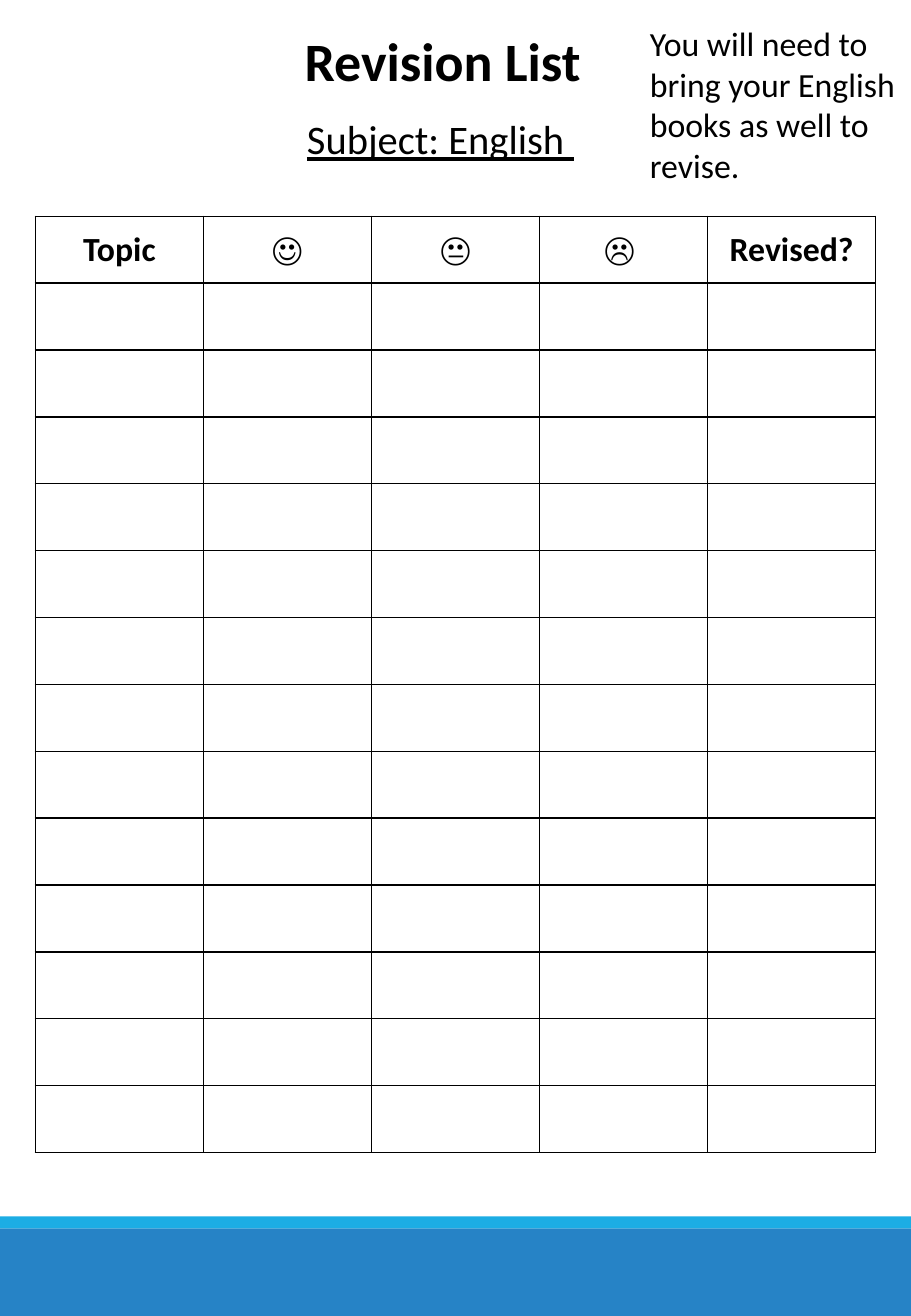
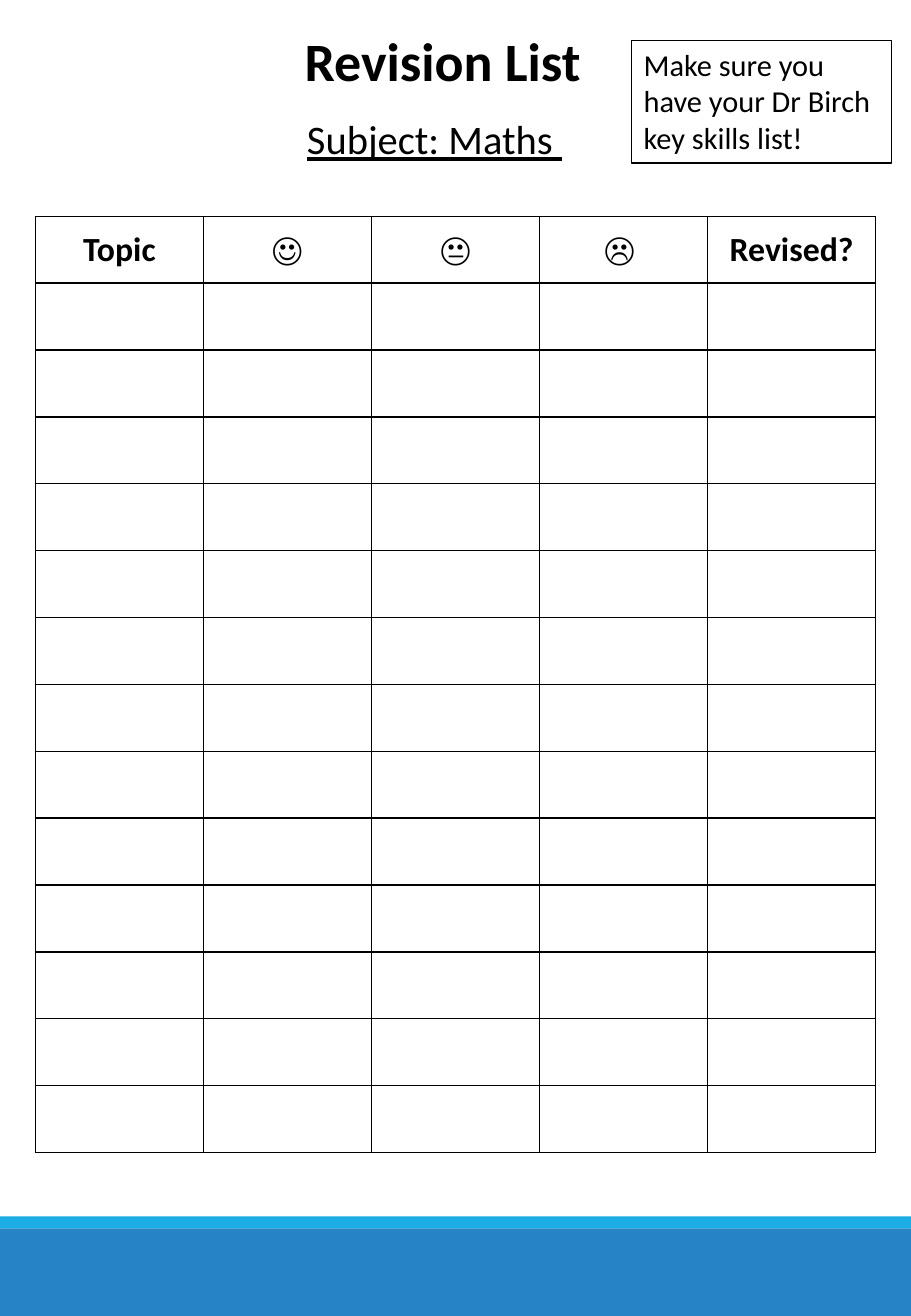
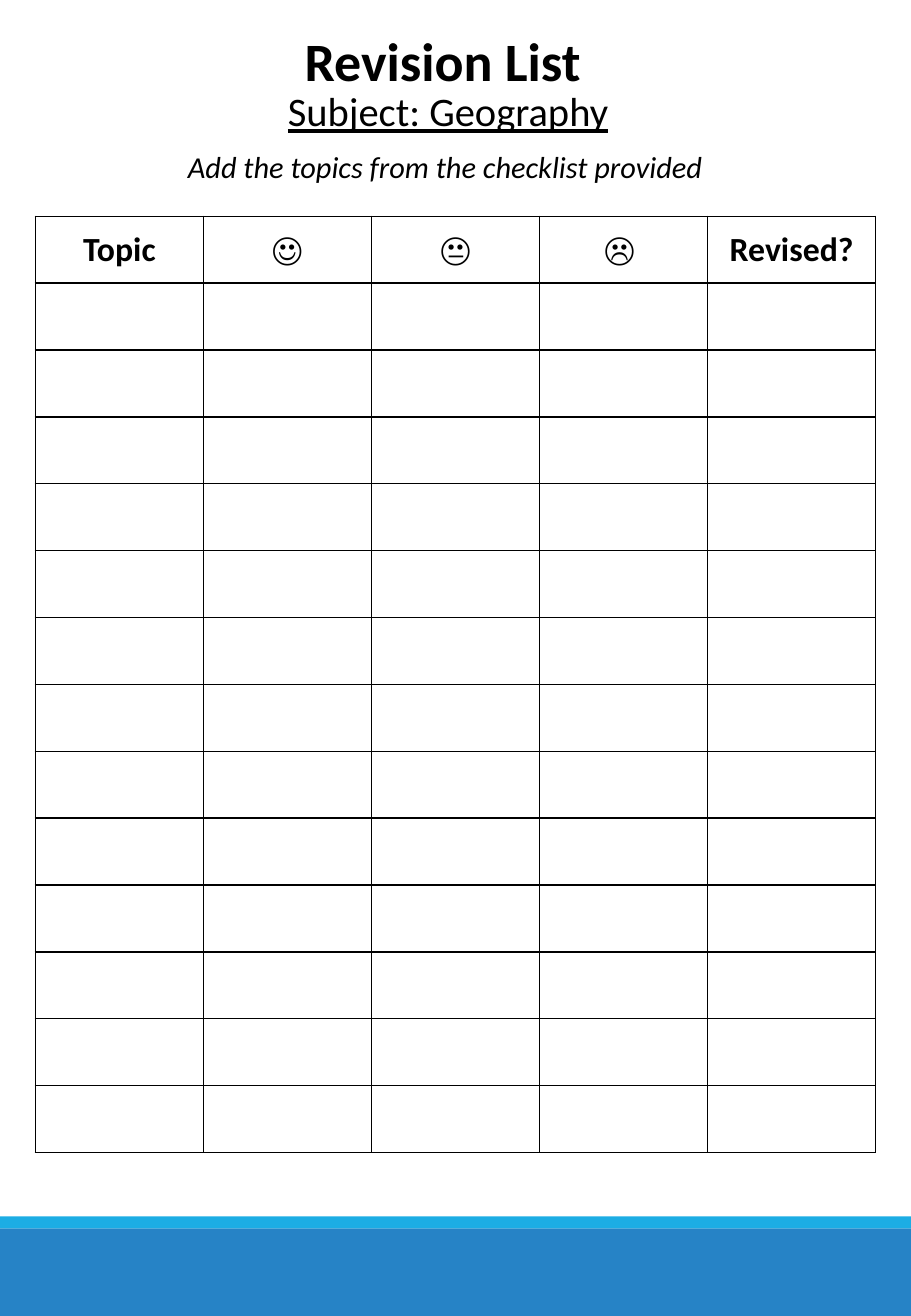
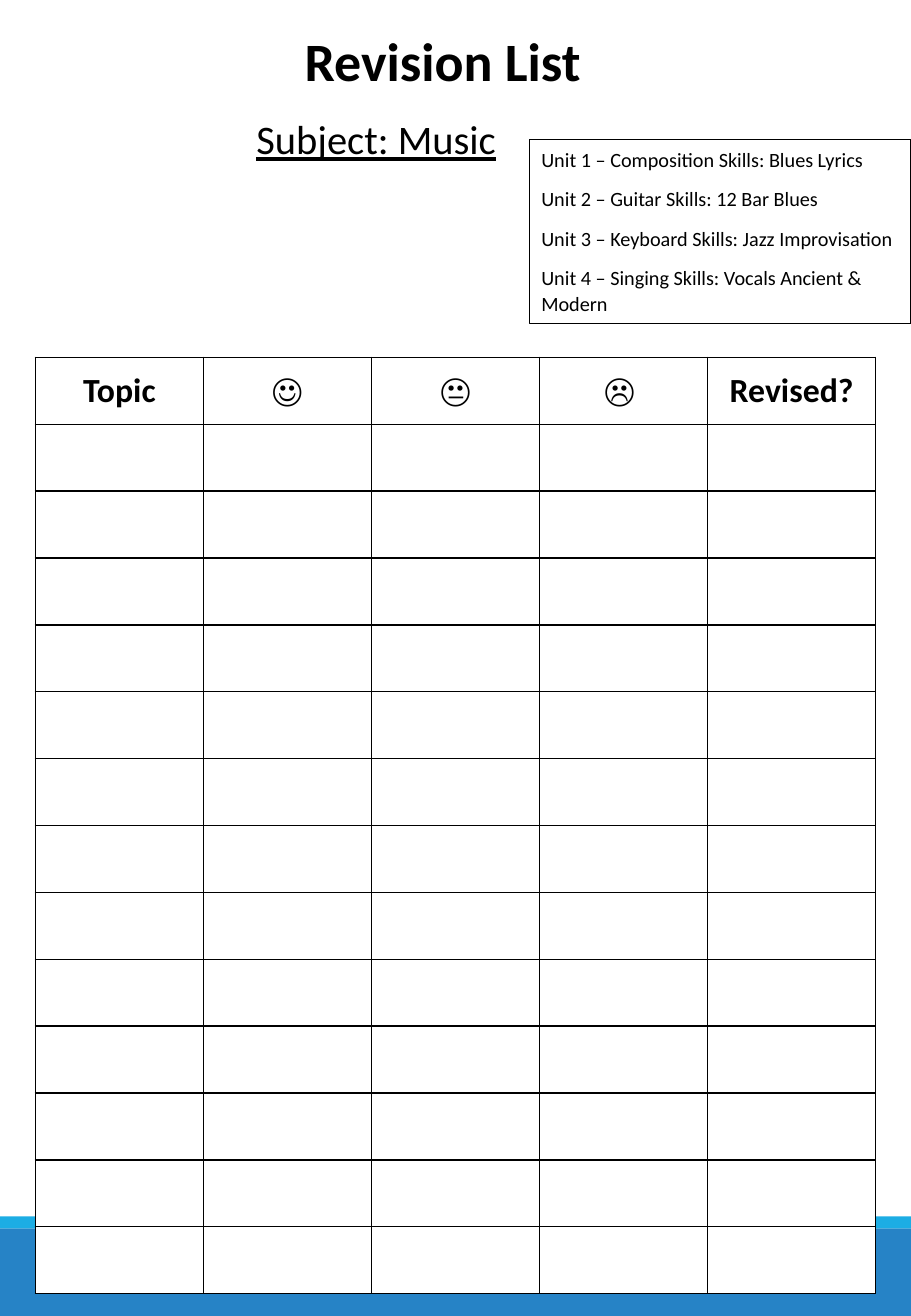
import pptx
import pptx.util
import pptx.dml.color
import pptx.enum.shapes
import pptx.enum.text
import pptx.oxml.ns
import lxml.etree

Cm, Pt = pptx.util.Cm, pptx.util.Pt
RGBColor = pptx.dml.color.RGBColor
BLACK = RGBColor(0x00, 0x00, 0x00)
WHITE = RGBColor(0xFF, 0xFF, 0xFF)
BLUE = RGBColor(0x26, 0x83, 0xC6)
SKY = RGBColor(0x1C, 0xAD, 0xE4)
FONT = "Calibri"
RECT = pptx.enum.shapes.MSO_SHAPE.RECTANGLE
ALIGN = pptx.enum.text.PP_ALIGN
ANCHOR = pptx.enum.text.MSO_ANCHOR
FIT = pptx.enum.text.MSO_AUTO_SIZE.SHAPE_TO_FIT_TEXT

# Boxes are left, top, width, height in cm
WIDE, HIGH = 19.05, 27.51
FOOT = (0, 25.43, WIDE, HIGH - 25.43)
STRIPE = 0.25
TITLE = (6.12, 0.46, 8.13, 1.63)
HEADS = ("Topic", "☺", "😐", "☹ ", "Revised?")
ROWS = 14
GRID = (0.74, 4.52, 17.57, 19.58)

PAGES = (
    dict(topic="Subject: English ", place=(6.17, 2.26, 6.73, 1.28),
         note=("You will need to bring your English books as well to revise.",),
         spot=(13.34, 0.36, 5.71, 3.68), style=dict(size=20)),
    dict(topic="Subject: Maths ", place=(6.17, 2.26, 6.73, 1.28),
         note=("Make sure you have your Dr Birch key skills list!",),
         spot=(13.21, 0.84, 5.44, 2.57), style=dict(size=18, frame=True)),
    dict(topic="Subject: Geography", place=(5.77, 1.68, 7.52, 1.28),
         note=("Add the topics from the checklist provided",),
         spot=(3.68, 2.97, 14.99, 1.03), style=dict(size=18, italic=True)),
    dict(topic="Subject: Music", place=(5.11, 2.26, 10.44, 1.28),
         note=("Unit 1 – Composition Skills: Blues Lyrics",
               "Unit 2 – Guitar Skills: 12 Bar Blues",
               "Unit 3 – Keyboard Skills: Jazz Improvisation",
               "Unit 4 – Singing Skills: Vocals Ancient & Modern"),
         spot=(11.07, 2.92, 7.98, 3.84),
         style=dict(size=12, frame=True, after=8, lead=1.07), top=7.47),
)


def to_cm(box):
    return [Cm(round(side, 2)) for side in box]


def set_font(para, size, **marks):
    for run in para.runs:
        run.font.name = FONT
        run.font.size = Pt(size)
        run.font.color.rgb = BLACK
        for name, value in marks.items():
            setattr(run.font, name, value)


def add_rect(slide, box, fill=None):
    shape = slide.shapes.add_shape(RECT, *to_cm(box))
    shape.shadow.inherit = False
    if fill is None:
        shape.fill.background()
        shape.line.color.rgb = BLACK
        shape.line.width = Pt(0.75)
    else:
        shape.fill.solid()
        shape.fill.fore_color.rgb = fill
        shape.line.fill.background()
    return shape


def add_text(slide, box, lines, size, frame=False, after=0, lead=1, **marks):
    shape = (add_rect(slide, box) if frame
             else slide.shapes.add_textbox(*to_cm(box)))
    text = shape.text_frame
    text.text = "\n".join(lines)
    text.word_wrap = True
    text.auto_size = FIT
    text.vertical_anchor = ANCHOR.TOP
    for para in text.paragraphs:
        para.alignment = ALIGN.LEFT
        para.space_after = Pt(after)
        para.line_spacing = lead
        set_font(para, size, **marks)


def add_edges(cell):
    props = cell._tc.get_or_add_tcPr()
    qn = pptx.oxml.ns.qn
    for side in ("lnL", "lnR", "lnT", "lnB"):
        line = lxml.etree.SubElement(props, qn("a:" + side), w=str(Pt(1)))
        fill = lxml.etree.SubElement(line, qn("a:solidFill"))
        lxml.etree.SubElement(fill, qn("a:srgbClr"), val=str(BLACK))


def add_foot(slide, box):
    left, top, width, height = box
    add_rect(slide, (left, top + STRIPE, width, height - STRIPE), BLUE)
    add_rect(slide, (left, top, width, STRIPE), SKY)


def add_grid(slide, box):
    table = slide.shapes.add_table(ROWS, len(HEADS), *to_cm(box)).table
    table.first_row = table.horz_banding = False
    for col in table.columns:
        col.width = Cm(box[2] / len(HEADS))
    for row in table.rows:
        row.height = Cm(box[3] / ROWS)
    for cell in table.iter_cells():
        add_edges(cell)
        cell.fill.solid()
        cell.fill.fore_color.rgb = WHITE
    # Heading row
    for cell, head in zip(table.rows[0].cells, HEADS):
        cell.vertical_anchor = ANCHOR.MIDDLE
        para = cell.text_frame.paragraphs[0]
        para.text = head
        para.alignment = ALIGN.CENTER
        set_font(para, 20, bold=True)


def add_page(deck, topic, place, note, spot, style, top=GRID[1]):
    slide = deck.slides.add_slide(deck.slide_layouts[6])
    add_foot(slide, FOOT)
    add_text(slide, place, (topic,), 24, underline=True)
    add_text(slide, TITLE, ("Revision List",), 32, bold=True)
    add_grid(slide, (GRID[0], top, GRID[2], GRID[3]))
    add_text(slide, spot, note, **style)


def main():
    deck = pptx.Presentation()
    deck.slide_width, deck.slide_height = Cm(WIDE), Cm(HIGH)
    for page in PAGES:
        add_page(deck, **page)
    deck.save("out.pptx")


if __name__ == "__main__":
    main()
